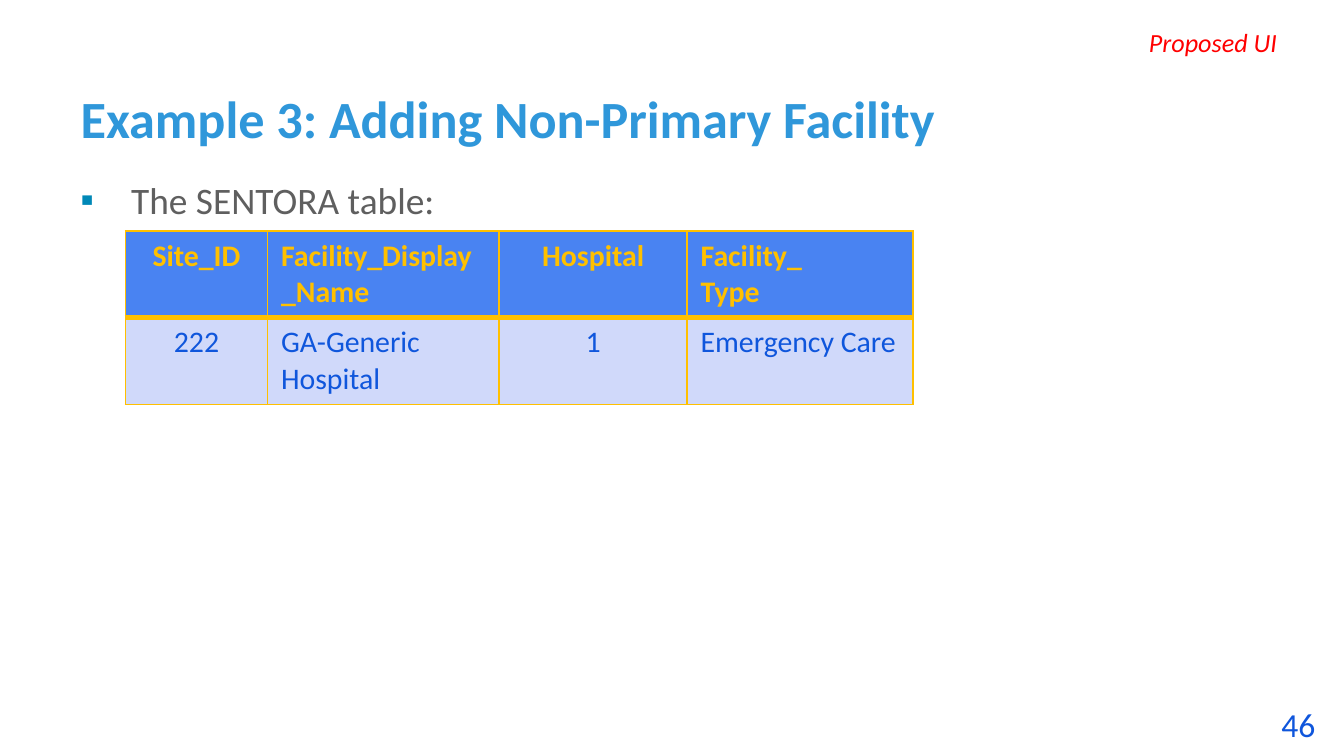
"""Build the slide showing the facility table for a non-primary facility."""
from dataclasses import dataclass

from lxml.etree import SubElement
from pptx import Presentation
from pptx.dml.color import RGBColor
from pptx.enum.text import MSO_ANCHOR as Anchor, MSO_AUTO_SIZE as AutoSize, PP_ALIGN as Align
from pptx.oxml import parse_xml
from pptx.oxml.ns import nsdecls, qn
from pptx.util import Pt

FONT = "Calibri"
RED = RGBColor(0xFF, 0x00, 0x00)
BLUE = RGBColor(0x0F, 0x56, 0xDC)
TITLE_BLUE = RGBColor(0x2F, 0x97, 0xDA)
BULLET_BLUE = RGBColor(0x00, 0x88, 0xB7)
GRAY = RGBColor(0x5F, 0x5F, 0x5F)
GOLD = RGBColor(0xFF, 0xC0, 0x00)
HEADER_FILL = RGBColor(0x49, 0x83, 0xF2)
BODY_FILL = RGBColor(0xD0, 0xD9, 0xFA)


@dataclass
class Style:
    size: float
    color: RGBColor
    bold: bool = False
    italic: bool = False


@dataclass
class Box:
    left: float
    top: float
    width: float
    height: float


@dataclass
class Column:
    header: str
    value: str
    width: float
    align: Align


@dataclass
class TableRow:
    height: float
    fill: RGBColor
    style: Style
    top_line: float
    bottom_line: float


COLUMNS = [
    Column("Site_ID", "222", 76.2, Align.CENTER),
    Column("Facility_Display_Name", "GA-Generic Hospital", 124, Align.LEFT),
    Column("Hospital", "1", 100.8, Align.CENTER),
    Column("Facility_\nType", "Emergency Care", 120.8, Align.LEFT),
]
ROWS = [
    TableRow(45, HEADER_FILL, Style(16, GOLD, bold=True), 1, 3),
    TableRow(46, BODY_FILL, Style(16, BLUE), 3, 1),
]


def write(text_frame, text: str, style: Style, align: Align = Align.LEFT):
    paragraph = text_frame.paragraphs[0]
    paragraph.text = text
    paragraph.alignment = align
    for run in paragraph.runs:
        font = run.font
        font.name, font.size = FONT, Pt(style.size)
        font.bold, font.italic = style.bold, style.italic
        font.color.rgb = style.color
    return paragraph


def place(shape, box: Box) -> None:
    shape.left, shape.top = Pt(box.left), Pt(box.top)
    shape.width, shape.height = Pt(box.width), Pt(box.height)


def add_label(slide, box: Box, text: str, style: Style, align: Align) -> None:
    label = slide.shapes.add_textbox(0, 0, 0, 0)
    place(label, box)
    label.text_frame.word_wrap = True
    write(label.text_frame, text, style, align)


def add_bullet(paragraph, indent: float) -> None:
    properties = paragraph._p.get_or_add_pPr()
    properties.set("marL", str(Pt(indent)))
    properties.set("indent", str(-Pt(indent)))
    color = SubElement(properties, qn("a:buClr"))
    SubElement(color, qn("a:srgbClr"), val=str(BULLET_BLUE))
    SubElement(properties, qn("a:buFont"), typeface=FONT)
    SubElement(properties, qn("a:buChar"), char="▪")


def set_borders(cell, row: TableRow) -> None:
    properties = cell._tc.get_or_add_tcPr()
    widths = {"lnL": 1, "lnR": 1, "lnT": row.top_line, "lnB": row.bottom_line}
    for position, (side, width) in enumerate(widths.items()):
        properties.insert(position, parse_xml(
            f'<a:{side} {nsdecls("a")} w="{Pt(width)}"><a:solidFill>'
            f'<a:srgbClr val="{GOLD}"/></a:solidFill></a:{side}>'))


def add_facility_table(slide, box: Box) -> None:
    frame = slide.shapes.add_table(len(ROWS), len(COLUMNS), Pt(box.left), Pt(box.top),
                                   Pt(box.width), Pt(box.height))
    table = frame.table
    for column_index, column in enumerate(COLUMNS):
        table.columns[column_index].width = Pt(column.width)
        for row_index, (row, text) in enumerate(zip(ROWS, (column.header, column.value))):
            table.rows[row_index].height = Pt(row.height)
            cell = table.cell(row_index, column_index)
            cell.fill.solid()
            cell.fill.fore_color.rgb = row.fill
            write(cell.text_frame, text, row.style, column.align)
            set_borders(cell, row)


def main() -> None:
    presentation = Presentation()
    presentation.slide_width, presentation.slide_height = Pt(720), Pt(405)
    slide = presentation.slides.add_slide(presentation.slide_layouts[1])

    title = slide.shapes.title
    place(title, Box(36, 16, 648, 67.7))
    title.text_frame.vertical_anchor = Anchor.BOTTOM
    title.text_frame.auto_size = AutoSize.NONE
    heading = write(title.text_frame, "Example 3: Adding Non-Primary Facility",
                    Style(28, TITLE_BLUE, bold=True))
    heading.line_spacing = Pt(30)

    body = slide.placeholders[1]
    place(body, Box(36, 91.4, 648, 262.8))
    body.text_frame.auto_size = AutoSize.NONE
    item = write(body.text_frame, "The SENTORA table:", Style(20, GRAY))
    item.space_before = Pt(4)
    add_bullet(item, 27)

    width = sum(column.width for column in COLUMNS)
    height = sum(row.height for row in ROWS)
    add_facility_table(slide, Box(67.2, 123.9, width, height))
    add_label(slide, Box(608.4, 10.4, 93, 24.5), "Proposed UI",
              Style(14, RED, italic=True), Align.LEFT)
    add_label(slide, Box(643.4, 373.7, 68.4, 28.8), "46", Style(18, BLUE), Align.RIGHT)
    presentation.save("out.pptx")


if __name__ == "__main__":
    main()
